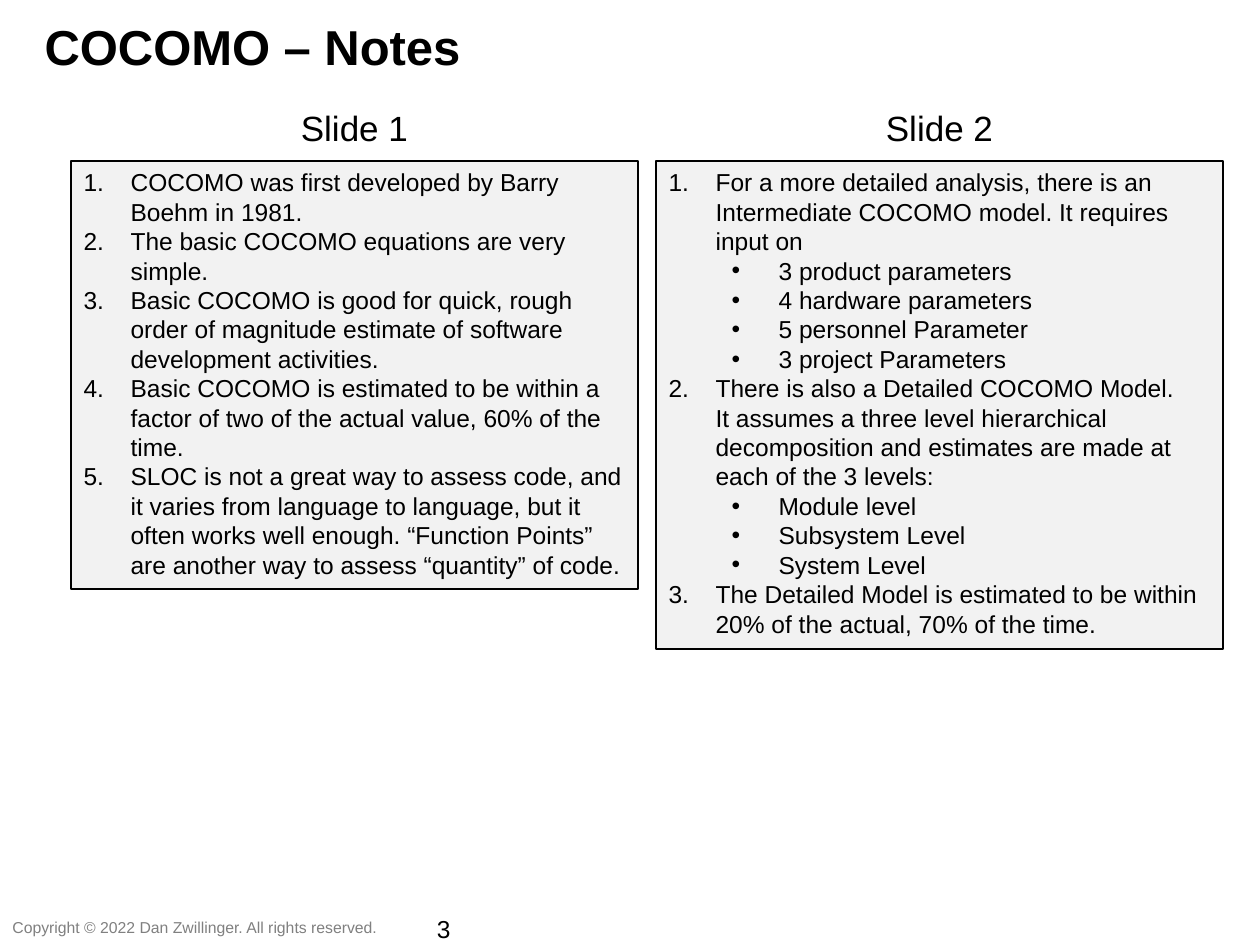
from dataclasses import dataclass

from lxml import etree
from pptx import Presentation
from pptx import util as u
from pptx.dml.color import RGBColor
from pptx.enum import text
from pptx.oxml import ns


@dataclass(frozen=True)
class Theme:
    font: str = "Arial"
    ink: str = "000000"
    grey: str = "808080"
    panel: str = "F2F2F2"
    title: int = 28
    head: int = 20
    body: int = 14
    foot: int = 9


THEME = Theme()
SCALE = 914400 / 126  # EMU per px
LEFT, STEP, WIDTH = 71, 585, 567
HANG, NEST = 47, 63
ALIGN = text.PP_ALIGN

# Each note is (level, wording)
NOTES = [
    ("Slide 1", 428, [
        (0, "COCOMO was first developed by Barry Boehm in 1981."),
        (0, "The basic COCOMO equations are very simple."),
        (0, "Basic COCOMO is good for quick, rough order of magnitude "
            "estimate of software development activities."),
        (0, "Basic COCOMO is estimated to be within a factor of two of the "
            "actual value, 60% of the time."),
        (0, "SLOC is not a great way to assess code, and it varies from "
            "language to language, but it often works well enough. “Function "
            "Points” are another way to assess “quantity” of code."),
    ]),
    ("Slide 2", 488, [
        (0, "For a more detailed analysis, there is an Intermediate COCOMO "
            "model. It requires input on"),
        (1, "3 product parameters"),
        (1, "4 hardware parameters"),
        (1, "5 personnel Parameter"),
        (1, "3 project Parameters"),
        (0, "There is also a Detailed COCOMO Model.\vIt assumes a three level "
            "hierarchical decomposition and estimates are made at each of "
            "the 3 levels:"),
        (1, "Module level"),
        (1, "Subsystem Level"),
        (1, "System Level"),
        (0, "The Detailed Model is estimated to be within 20% of the actual, "
            "70% of the time."),
    ]),
]


def px(n):
    return u.Emu(round(n * SCALE))


def apply(obj, vals):
    for name, val in vals.items():
        setattr(obj, name, val)


def place(shape, left, top, width, height):
    apply(shape, {"left": px(left), "top": px(top),
                  "width": px(width), "height": px(height)})


def setup(shape, wrap=True):
    frame = shape.text_frame
    apply(frame, {"word_wrap": wrap, "auto_size": text.MSO_AUTO_SIZE.NONE,
                  "vertical_anchor": text.MSO_ANCHOR.TOP})
    return frame


def write(para, words, size, color=THEME.ink, bold=False, align=ALIGN.LEFT):
    para.text = words
    apply(para, {"alignment": align, "line_spacing": 1.0,
                 "space_before": u.Pt(0), "space_after": u.Pt(0)})
    for run in para.runs:
        apply(run.font, {"name": THEME.font, "size": u.Pt(size), "bold": bold})
        run.font.color.rgb = RGBColor.from_string(color)
    # A line break carries its own type size
    for gap in para._p.findall(ns.qn("a:br")):
        etree.SubElement(gap, ns.qn("a:rPr"), sz=str(size * 100))


def mark(para, level):
    para.level = level
    props = para._p.get_or_add_pPr()
    props.set("marL", str(px(HANG + NEST * level)))
    props.set("indent", str(-px(HANG)))
    etree.SubElement(props, ns.qn("a:buFont"), typeface=THEME.font)
    if level:
        etree.SubElement(props, ns.qn("a:buChar"), char="•")
    else:
        etree.SubElement(props, ns.qn("a:buAutoNum"), type="arabicPeriod")


def label(shape, box, words, size, **style):
    place(shape, *box)
    write(setup(shape).paragraphs[0], words, size, **style)


def panel(shape, box, notes):
    place(shape, *box)
    shape.fill.solid()
    shape.fill.fore_color.rgb = RGBColor.from_string(THEME.panel)
    shape.line.color.rgb = RGBColor.from_string(THEME.ink)
    shape.line.width = u.Pt(0.75)
    frame = setup(shape)
    for i, (level, words) in enumerate(notes):
        para = frame.add_paragraph() if i else frame.paragraphs[0]
        write(para, words, THEME.body)
        mark(para, level)


def small(slide, box, words, size, wrap=True, **style):
    shape = slide.shapes.add_textbox(0, 0, 0, 0)
    label(shape, box, words, size, **style)
    shape.text_frame.word_wrap = wrap


def main():
    deck = Presentation()
    apply(deck, {"slide_width": px(1260), "slide_height": px(945)})
    slide = deck.slides.add_slide(deck.slide_layouts.get_by_name("Comparison"))
    holds = slide.placeholders

    # Title
    label(slide.shapes.title, (32, 10, 993, 72), "COCOMO – Notes",
          THEME.title, bold=True)

    # Two headed columns: placeholders 1 and 2, then 3 and 4
    for i, (head, tall, notes) in enumerate(NOTES):
        left = LEFT + STEP * i
        label(holds[1 + 2 * i], (left, 100, WIDTH, 55), head, THEME.head,
              align=ALIGN.CENTER)
        panel(holds[2 + 2 * i], (left, 161, WIDTH, tall), notes)

    # Footer
    small(slide, (0, 912, 394, 32),
          "Copyright © 2022 Dan Zwillinger. All rights reserved.",
          THEME.foot, wrap=False, color=THEME.grey)
    small(slide, (394, 908, 69, 34), "3", THEME.body, align=ALIGN.RIGHT)

    deck.save("out.pptx")


if __name__ == "__main__":
    main()
